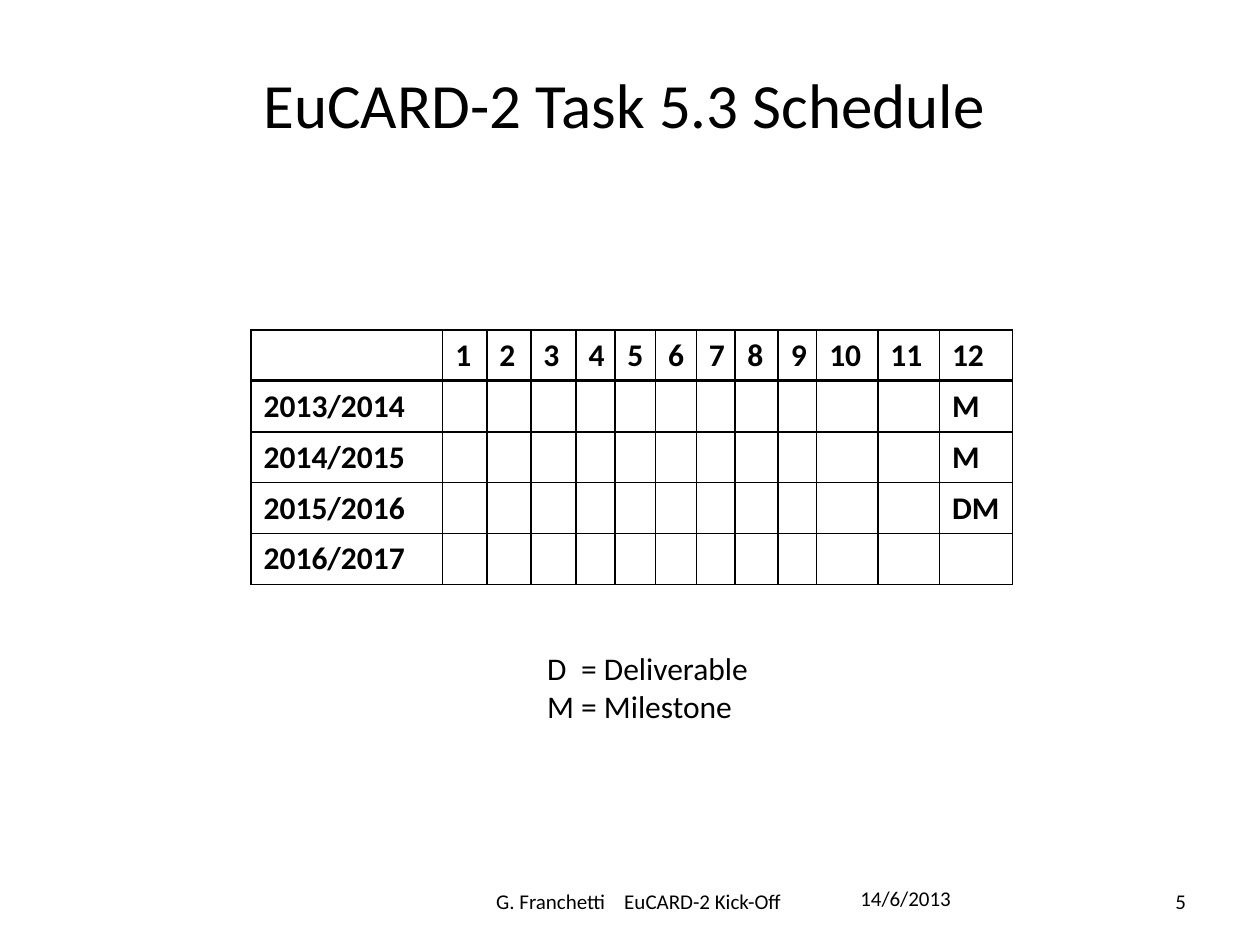
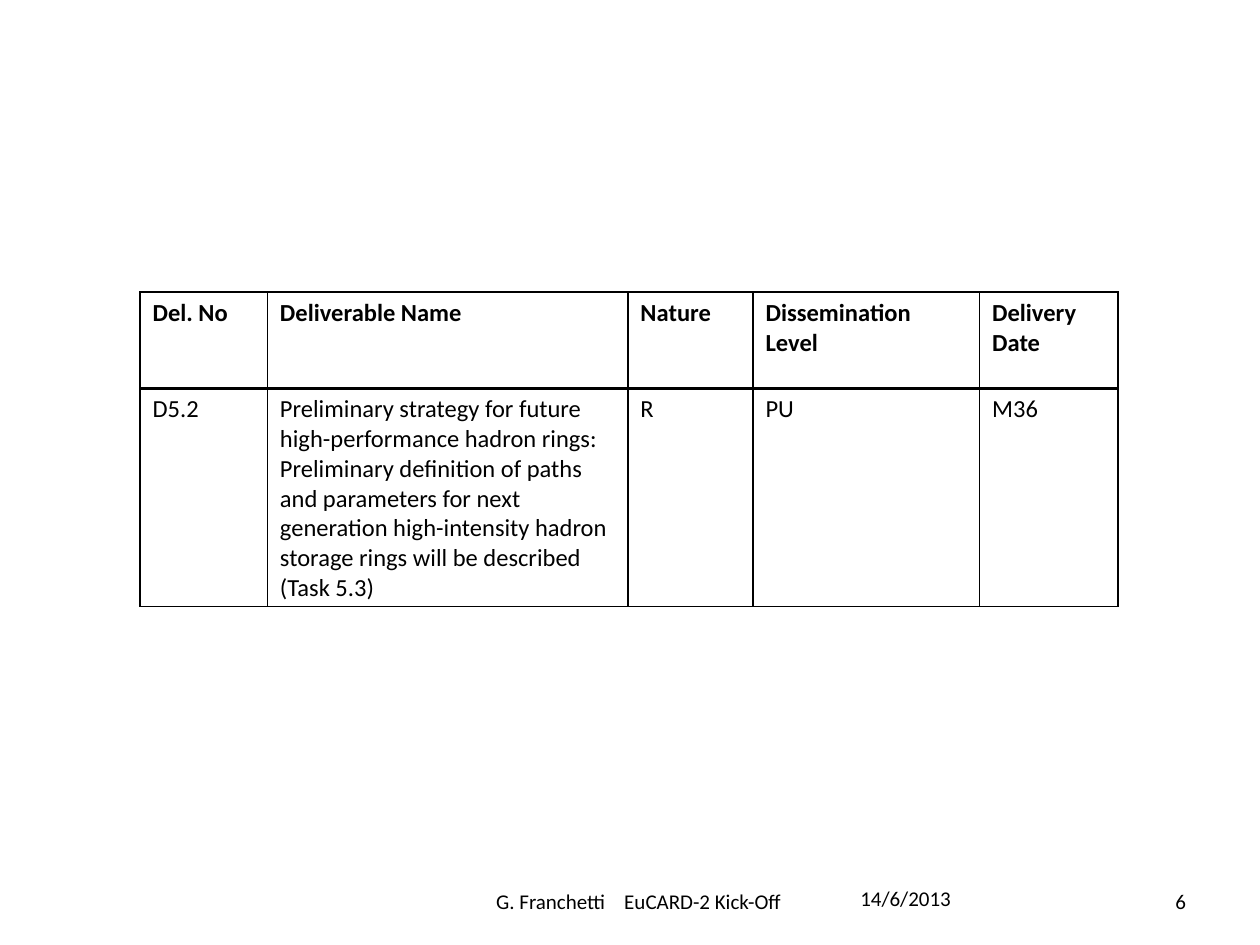
from lxml.etree import SubElement
from pptx import Presentation
from pptx.dml.color import RGBColor
from pptx.enum.text import MSO_ANCHOR, PP_ALIGN
from pptx.oxml import parse_xml
from pptx.oxml.ns import nsdecls, qn
from pptx.util import Pt

BLACK = RGBColor(0x00, 0x00, 0x00)
FONT = "Calibri"
THIN, THICK = 1, 2
FOOTER_HEIGHT = 28.8

MONTHS = [str(month) for month in range(1, 13)]
MONTH_WIDTHS = [25.2, 25.2, 25.8, 22.2, 23.3, 23.3, 22, 24.8, 22, 35, 35.2, 41.7]
YEAR_WIDTH = 109.5
YEAR_MARKS = {"2013/2014": "M", "2014/2015": "M", "2015/2016": "DM", "2016/2017": ""}

DELIVERABLE_WIDTHS = [72.8, 206, 71.5, 129.5, 79.2]
DELIVERABLE_HEADER = ["Del. No", "Deliverable Name", "Nature",
                      "Dissemination Level", "Delivery Date"]
DELIVERABLE = [
    "D5.2",
    "Preliminary strategy for future high-performance hadron rings: "
    "Preliminary definition of paths and parameters for next generation "
    "high-intensity hadron storage rings will be described (Task 5.3)",
    "R", "PU", "M36",
]


def add_run(paragraph, text, size, bold=False):
    """Append one black run to a paragraph."""
    run = paragraph.add_run()
    run.text = text
    run.font.name = FONT
    run.font.size = Pt(size)
    run.font.bold = bold
    run.font.color.rgb = BLACK


def add_tab_stop(paragraph, position):
    """Give a paragraph one left tab stop."""
    tab_list = SubElement(paragraph._p.get_or_add_pPr(), qn("a:tabLst"))
    SubElement(tab_list, qn("a:tab"), pos=str(Pt(position)), algn="l")


def add_text(slide, box, lines, size, align=PP_ALIGN.LEFT,
             anchor=MSO_ANCHOR.TOP, tab=None, left_inset=7.2):
    """Add a text box with one paragraph for each line."""
    frame = slide.shapes.add_textbox(*map(Pt, box)).text_frame
    frame.word_wrap = True
    frame.vertical_anchor = anchor
    frame.margin_left = Pt(left_inset)
    for index, line in enumerate(lines):
        paragraph = frame.add_paragraph() if index else frame.paragraphs[0]
        paragraph.alignment = align
        if tab:
            add_tab_stop(paragraph, tab)
        add_run(paragraph, line, size)


def set_borders(cell, top, bottom):
    """Draw black borders around a cell."""
    widths = {"lnL": THIN, "lnR": THIN, "lnT": top, "lnB": bottom}
    properties = cell._tc.get_or_add_tcPr()
    for index, (side, width) in enumerate(widths.items()):
        properties.insert(index, parse_xml(
            f'<a:{side} {nsdecls("a")} w="{Pt(width)}"><a:solidFill>'
            f'<a:srgbClr val="{BLACK}"/></a:solidFill></a:{side}>'))


def add_grid(slide, left, top, widths, heights, rows, size, bold_body):
    """Add a plain ruled table with a thick line under its header."""
    table = slide.shapes.add_table(
        len(rows), len(widths), Pt(left), Pt(top),
        Pt(sum(widths)), Pt(sum(heights))).table
    table.first_row = table.horz_banding = False
    for column, width in zip(table.columns, widths):
        column.width = Pt(width)
    for row_index, (values, height) in enumerate(zip(rows, heights)):
        table.rows[row_index].height = Pt(height)
        for column_index, value in enumerate(values):
            cell = table.cell(row_index, column_index)
            cell.fill.background()
            set_borders(cell, THICK if row_index == 1 else THIN,
                        THICK if row_index == 0 else THIN)
            if value:
                add_run(cell.text_frame.paragraphs[0], value, size,
                        bold_body or row_index == 0)


def add_footer(slide, left, top, number):
    """Add the speaker and event, the date and the slide number."""
    add_text(slide, (left, top, 239, FOOTER_HEIGHT),
             ["G. Franchetti\tEuCARD-2 Kick-Off"], 12,
             anchor=MSO_ANCHOR.MIDDLE, tab=73.2, left_inset=38)
    add_text(slide, (left + 239, top - 1.4, 87, FOOTER_HEIGHT),
             ["14/6/2013"], 12, anchor=MSO_ANCHOR.MIDDLE)
    add_text(slide, (left + 381, top, 58.3, FOOTER_HEIGHT),
             [str(number)], 12, PP_ALIGN.RIGHT, MSO_ANCHOR.MIDDLE)


def add_schedule(slide, left, top):
    """Add the title, the month grid and its legend."""
    add_text(slide, (left, top, 434, 51), ["EuCARD-2 Task 5.3 Schedule"], 36)
    rows = [[""] + MONTHS]
    for year, mark in YEAR_MARKS.items():
        rows.append([year] + [""] * (len(MONTHS) - 1) + [mark])
    add_grid(slide, left, top + 154.8, [YEAR_WIDTH] + MONTH_WIDTHS,
             [29.1] * len(rows), rows, 18, True)
    add_text(slide, (left + 162, top + 333.4, 131, 51),
             ["D\t= Deliverable", "M\t= Milestone"], 18, tab=19.5)


def add_deliverables(slide, left, top):
    """Add the table of deliverables."""
    add_grid(slide, left, top, DELIVERABLE_WIDTHS, [54.8, 124.5],
             [DELIVERABLE_HEADER, DELIVERABLE], 14, False)


def main():
    """Build and save the presentation."""
    presentation = Presentation()
    presentation.slide_width, presentation.slide_height = Pt(720), Pt(540)
    regions = [(add_schedule, 143.5, 33.8), (add_deliverables, 80, 167)]
    for number, (add_region, left, top) in enumerate(regions, start=5):
        slide = presentation.slides.add_slide(presentation.slide_layouts[6])
        add_region(slide, left, top)
        add_footer(slide, 245.5, 500.4, number)
    presentation.save("out.pptx")


if __name__ == "__main__":
    main()
